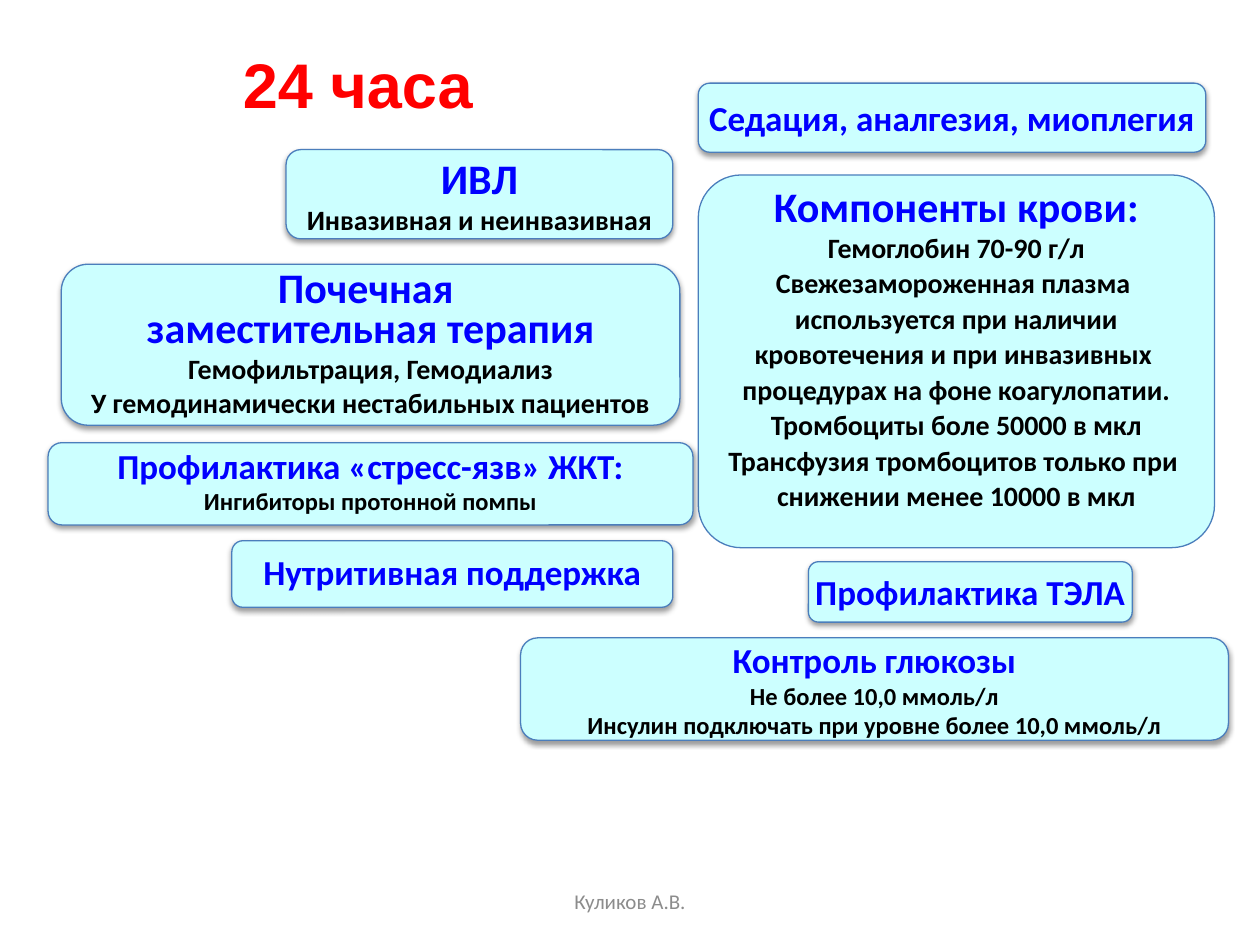
from dataclasses import dataclass
from lxml import etree
from pptx import Presentation
from pptx.dml.color import RGBColor
from pptx.enum.shapes import MSO_SHAPE
from pptx.enum.text import MSO_ANCHOR, PP_ALIGN
from pptx.oxml.ns import qn
from pptx.util import Pt

ROUND = MSO_SHAPE.ROUNDED_RECTANGLE
TOP, MIDDLE = MSO_ANCHOR.TOP, MSO_ANCHOR.MIDDLE
CENTER = PP_ALIGN.CENTER


@dataclass(frozen=True)
class Theme:
    head: str = "Arial"
    body: str = "Calibri"
    red: str = "FF0000"
    blue: str = "0000FF"
    black: str = "000000"
    gray: str = "8C8C8C"
    fill: str = "CCFFFF"
    edge: str = "4B7EBC"
    title: int = 36
    large: int = 24
    mid: int = 20
    text: int = 16
    small: int = 14
    foot: int = 12


THEME = Theme()


@dataclass(frozen=True)
class Line:
    text: str
    size: int
    color: str = THEME.black
    pitch: float = 1.0
    before: float = 0
    font: str = THEME.body
    bold: bool = True


def key(text, size=THEME.mid, pitch=1.0):
    """Blue heading line of a card."""
    return Line(text, size, THEME.blue, pitch)


def write(frame, lines, anchor=MIDDLE, wrap=False):
    frame.word_wrap = wrap
    frame.vertical_anchor = anchor
    for i, line in enumerate(lines):
        para = frame.add_paragraph() if i else frame.paragraphs[0]
        para.alignment = CENTER
        para.line_spacing = line.pitch
        para.space_before = Pt(line.before)
        run = para.add_run()
        run.text = line.text
        font = run.font
        font.name, font.size, font.bold = line.font, Pt(line.size), line.bold
        font.color.rgb = RGBColor.from_string(line.color)


def place(shape, box):
    shape.left, shape.top, shape.width, shape.height = map(Pt, box)


def shade(shape):
    """Soft shadow straight below the shape."""
    glow = shape._element.spPr.find(qn("a:effectLst"))
    outer = etree.SubElement(glow, qn("a:outerShdw"), blurRad=str(Pt(3.1)),
                             dist=str(Pt(1.6)), dir="5400000", rotWithShape="0")
    tint = etree.SubElement(outer, qn("a:srgbClr"), val=THEME.black)
    etree.SubElement(tint, qn("a:alpha"), val="38000")


def card(slide, box, lines, curve=None, shadow=True, foot=3.6):
    shape = slide.shapes.add_shape(ROUND, *map(Pt, box))
    if curve is not None:
        shape.adjustments[0] = curve
    shape.fill.solid()
    shape.fill.fore_color.rgb = RGBColor.from_string(THEME.fill)
    shape.line.color.rgb = RGBColor.from_string(THEME.edge)
    shape.line.width = Pt(0.75)
    shape.shadow.inherit = False
    if shadow:
        shade(shape)
    shape.text_frame.margin_bottom = Pt(foot)
    write(shape.text_frame, lines)


def title(slide, box):
    shape = slide.shapes.title
    place(shape, box)
    line = Line("24 часа", THEME.title, THEME.red, font=THEME.head)
    write(shape.text_frame, [line], TOP)


def blood(slide, box):
    rules = ["Свежезамороженная плазма ", "используется при наличии",
             "кровотечения и при инвазивных ",
             "процедурах на фоне коагулопатии.",
             "Тромбоциты боле 50000 в мкл",
             "Трансфузия тромбоцитов только при ",
             "снижении менее 10000 в мкл"]
    lines = [key("Компоненты крови:", THEME.large),
             Line("Гемоглобин 70-90 г/л", THEME.text)]
    lines += [Line(rule, THEME.text, pitch=0.9, before=3) for rule in rules]
    card(slide, box, lines, curve=0.115, shadow=False, foot=20.6)


def footer(slide, box):
    shape = slide.shapes.add_textbox(*map(Pt, box))
    line = Line("Куликов А.В.", THEME.foot, THEME.gray, bold=False)
    write(shape.text_frame, [line], wrap=True)


CARDS = [
    ((163.5, 85.5, 221, 51),
     [key("ИВЛ", THEME.large),
      Line("Инвазивная и неинвазивная", THEME.text)]),
    ((35, 151, 353.5, 92),
     [key("Почечная ", THEME.large, 0.8),
      key("заместительная терапия", THEME.large, 0.8),
      Line("Гемофильтрация, Гемодиализ", THEME.text),
      Line("У гемодинамически нестабильных пациентов", THEME.text)]),
    ((399, 47.5, 290, 39.5), [key("Седация, аналгезия, миоплегия")]),
    ((27.5, 253, 368.5, 47),
     [key("Профилактика «стресс-язв» ЖКТ:", pitch=0.8),
      Line("Ингибиторы протонной помпы", THEME.small)]),
    ((132.5, 309, 252, 38), [key("Нутритивная поддержка", pitch=0.9)]),
    ((297.5, 364.5, 404.5, 58.5),
     [key("Контроль глюкозы"),
      Line("Не более 10,0 ммоль/л", THEME.small),
      Line("Инсулин подключать при уровне более 10,0 ммоль/л", THEME.small)]),
    ((462, 321, 185, 34.5), [key("Профилактика ТЭЛА")]),
]


def main():
    deck = Presentation()
    deck.slide_width, deck.slide_height = Pt(720), Pt(540)
    slide = deck.slides.add_slide(deck.slide_layouts[5])
    title(slide, (131, 22.5, 147, 51))
    blood(slide, (399, 100, 295, 213))
    for box, lines in CARDS:
        card(slide, box, lines)
    footer(slide, (246, 500.5, 228, 28.5))
    deck.save("out.pptx")


if __name__ == "__main__":
    main()
